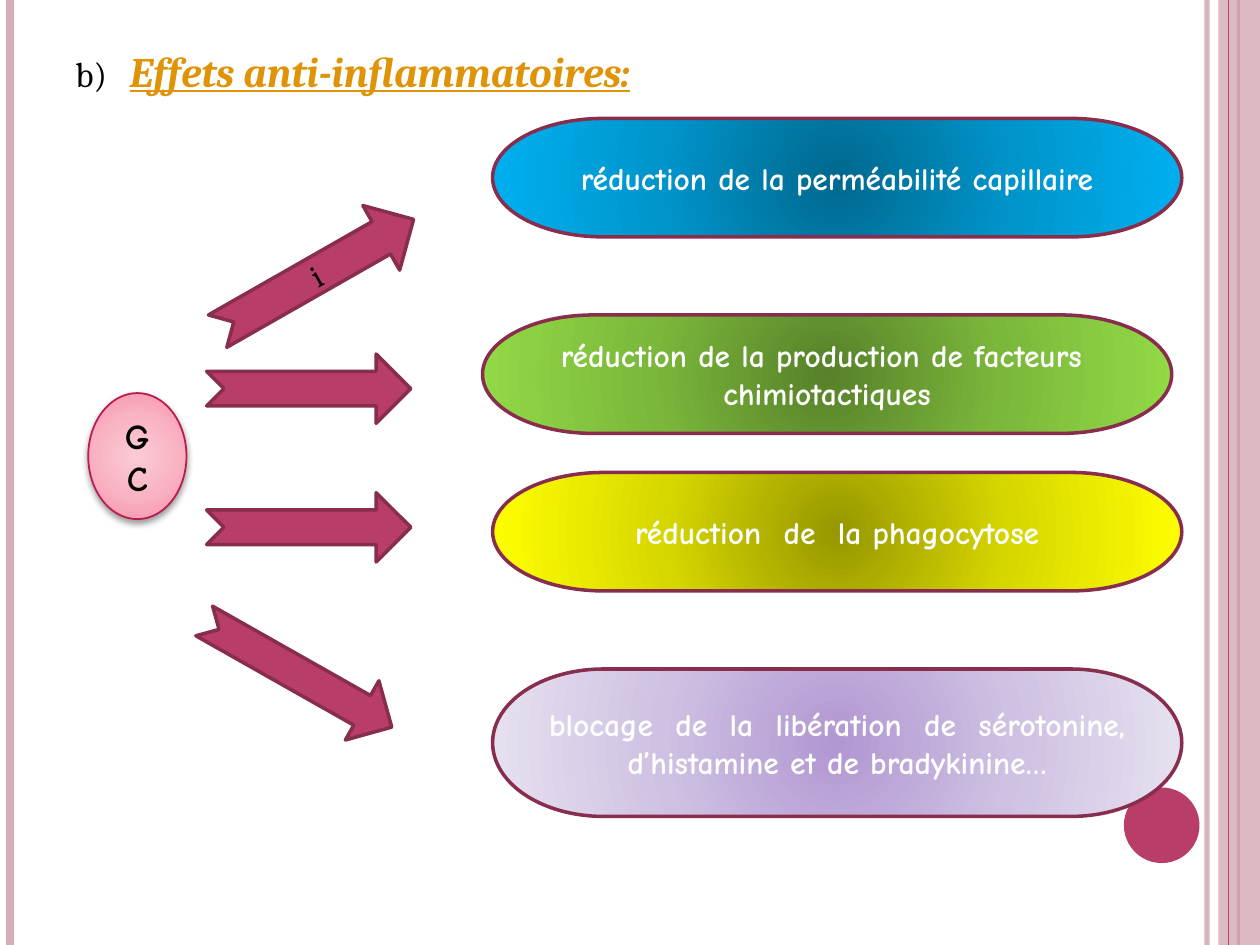
"""Build the slide on the anti-inflammatory effects of GC."""
from lxml import etree
from pptx import Presentation, util as u
from pptx.dml import color
from pptx.enum import shapes, text
from pptx.oxml import ns

RULES = [(9.58, "D8AFB9", 3, 93), (0.08, "D8AFB9", 4.5, 100),
         (9.83, "B83D68", 1.5, 100)]
INNER = (9.75, "B83D68", 0.75, 100)
ARROWS = [(1.64, 3.91, 1.62, 0.55, 0, ""), (1.61, 1.89, 1.79, 0.59, 330.3, "i"),
          (1.64, 2.81, 1.62, 0.55, 0, ""), (1.51, 5.08, 1.71, 0.54, 29.5, "")]
EFFECTS = [
    (3.91, 0.94, 0.94, ("00688E", "0094CA", "00B0F0"),
     "réduction de la perméabilité capillaire"),
    (3.83, 2.5, 0.94, ("57812A", "7BB73B", "92DA46"),
     "réduction de la production de facteurs  chimiotactiques"),
    (3.91, 3.75, 0.94, ("979700", "D7D700", "FFFF00"),
     "réduction  de  la phagocytose"),
    (3.91, 5.31, 1.17, ("B197D2", "CEC1E2", "E7E1F0"),
     "blocage  de  la  libération  de  sérotonine, d’histamine et de bradykinine…"),
]
PINK = ("FBCBD6", "F9B4C3", "F78DA7")
PLUM, EDGE = "B83D68", "882D4D"
KIND = shapes.MSO_SHAPE

deck = Presentation()
deck.slide_width, deck.slide_height = u.Inches(10), u.Inches(7.5)
slide = deck.slides.add_slide(deck.slide_layouts[6])


def rgb(code):
    """Turn a hex string into a colour."""
    return color.RGBColor.from_string(code)


def node(tree, tag, **attrs):
    """Add a drawing element below a parent."""
    return etree.SubElement(tree, ns.qn("a:" + tag), attrs)


def fade(tree, alpha):
    """Set the opacity in percent of the first colour below a node."""
    if alpha < 100:
        node(next(tree.iter(ns.qn("a:srgbClr"))), "alpha", val=str(alpha * 1000))


def write(par, words, size=18, font="Comic Neue", ink="FFFFFF", bold=False,
          italic=False, under=False):
    """Add a formatted run to a paragraph."""
    run = par.add_run()
    run.text = words
    face = run.font
    face.size, face.name, face.color.rgb = u.Pt(size), font, rgb(ink)
    face.bold, face.italic, face.underline = bold, italic, under


def rule(x, ink, width, alpha):
    """Draw a full-height vertical line."""
    line = slide.shapes.add_connector(
        shapes.MSO_CONNECTOR.STRAIGHT, u.Inches(x), 0, u.Inches(x), u.Inches(7.5))
    line.line.color.rgb, line.line.width = rgb(ink), u.Pt(width)
    prop = line._element.spPr
    fade(prop, alpha)
    node(prop, "effectLst")


def draw(kind, x, y, w, h, fill=PLUM, edge=None, width=2, words="", **form):
    """Add a flat shape with centred text."""
    item = slide.shapes.add_shape(kind, *map(u.Inches, (x, y, w, h)))
    item.shadow.inherit = False
    item.fill.solid()
    item.fill.fore_color.rgb = rgb(fill)
    if edge:
        item.line.color.rgb, item.line.width = rgb(edge), u.Pt(width)
    else:
        item.line.fill.background()
    if words:
        frame = item.text_frame
        frame.word_wrap, frame.vertical_anchor = True, text.MSO_ANCHOR.MIDDLE
        par = frame.paragraphs[0]
        par.alignment = text.PP_ALIGN.CENTER
        write(par, words, **form)
    return item


def glow(item, inks):
    """Replace a solid fill by a gradient from the centre outwards."""
    prop = item._element.spPr
    grad = etree.Element(ns.qn("a:gradFill"), rotWithShape="1")
    stops = node(grad, "gsLst")
    for i, ink in enumerate(inks):
        node(node(stops, "gs", pos=str(i * 50000)), "srgbClr", val=ink)
    way = node(grad, "path", path="circle")
    node(way, "fillToRect", l="50000", t="50000", r="50000", b="50000")
    prop.replace(prop.find(ns.qn("a:solidFill")), grad)


for row in RULES:
    rule(*row)
band = draw(KIND.RECTANGLE, 9.67, 0, 0.33, 7.5, fill="D8AFB9")
fade(band._element.spPr, 87)
rule(*INNER)
draw(KIND.OVAL, 8.92, 6.25, 0.6, 0.6)

box = slide.shapes.add_textbox(*map(u.Inches, (0.5, 0.31, 9, 0.6)))
box.text_frame.word_wrap = True
head = box.text_frame.paragraphs[0]
head.space_before = u.Pt(6)
prop = head._p.get_or_add_pPr()
prop.set("marL", str(u.Inches(0.43)))
prop.set("indent", str(u.Inches(-0.43)))
write(head, "b)\t", size=20, font="Cambria", ink="000000")
write(head, "Effets anti-inflammatoires:", size=24, font="Cambria", ink="DF9307",
      bold=True, italic=True, under=True)

hub = draw(KIND.OVAL, 0.7, 3.12, 0.78, 1, edge="B81A51", width=1, words="GC",
           size=20, ink="000000", bold=True)
glow(hub, PINK)
cast = node(hub._element.spPr.find(ns.qn("a:effectLst")), "outerShdw",
            blurRad=str(u.Pt(4)), dist=str(u.Pt(2)), dir="5400000", rotWithShape="0")
node(node(cast, "srgbClr", val="000000"), "alpha", val="40000")

for x, y, w, h, turn, words in ARROWS:
    arrow = draw(KIND.NOTCHED_RIGHT_ARROW, x, y, w, h, edge=EDGE, words=words,
                 font="Cambria", ink="000000")
    arrow.rotation = turn

for x, y, h, inks, words in EFFECTS:
    pill = draw(KIND.FLOWCHART_TERMINATOR, x, y, 5.47, h, edge=EDGE,
                words=words, bold=True)
    glow(pill, inks)

deck.save("out.pptx")
